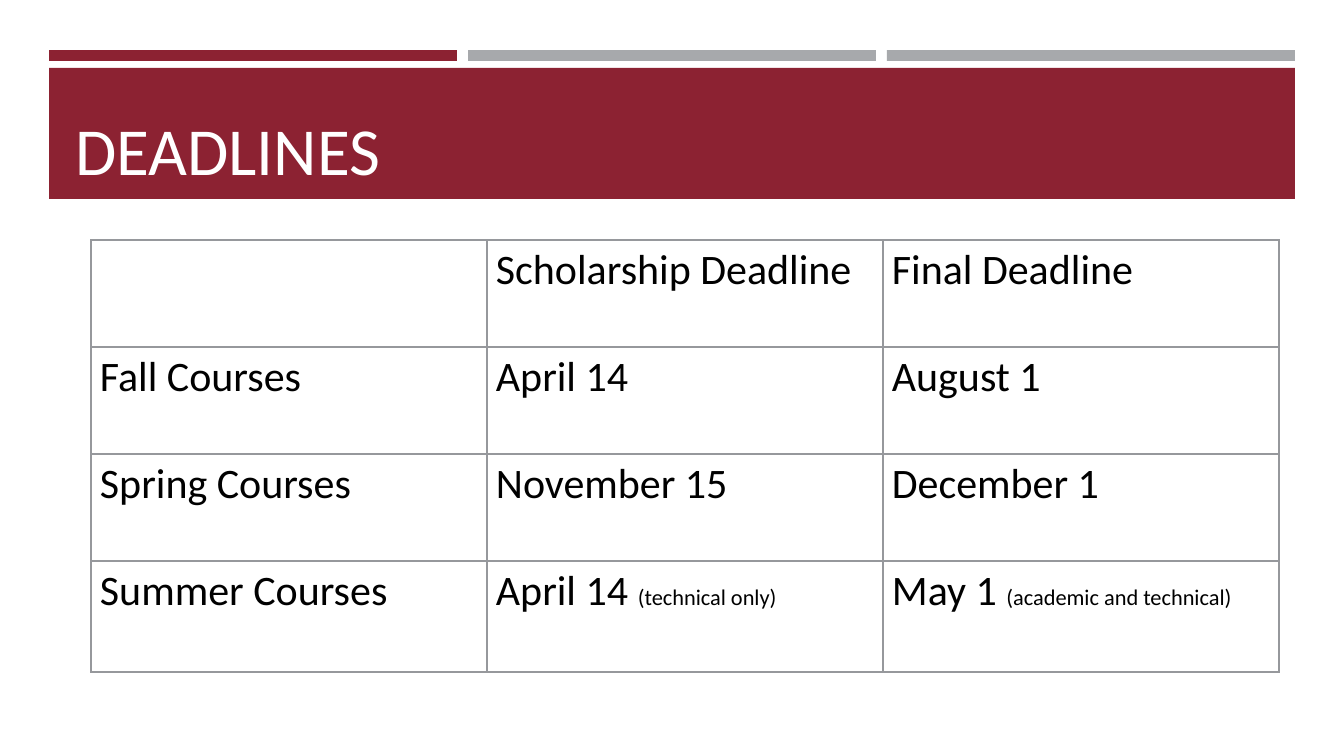
from lxml.etree import SubElement
from pptx import Presentation
from pptx.dml.color import RGBColor
from pptx.enum.shapes import MSO_SHAPE as Shape
from pptx.enum.text import MSO_ANCHOR as Anchor
from pptx.oxml.ns import qn
from pptx.util import Emu, Pt

CRIMSON, GRAY, BORDER = "8C2232", "A7A9AC", "96989C"
WHITE, BLACK = "FFFFFF", "000000"
FONT = "Calibri"

TITLE = "DEADLINES"
ACCENTS = [CRIMSON, GRAY, GRAY]
DEADLINES = [
    [[], [("Scholarship Deadline", 30)], [("Final Deadline", 30)]],
    [[("Fall Courses", 30)], [("April 14", 30)], [("August 1", 30)]],
    [[("Spring Courses", 30)], [("November 15", 30)], [("December 1", 30)]],
    [
        [("Summer Courses", 30)],
        [("April 14 ", 30), ("(technical only)", 16)],
        [("May 1 ", 30), ("(academic and technical)", 16)],
    ],
]

SLIDE_SIZE = (1344, 756)
ACCENT_LEFT, ACCENT_TOP, ACCENT_STEP = 49, 50, 419
ACCENT_SIZE = (408, 11)
BANNER = (49, 68, 1246, 131)
TITLE_BOX = (65, 78, 1216, 112)
TITLE_INSETS = {"margin_left": 10, "margin_right": 10, "margin_top": 5, "margin_bottom": 1}
TABLE_LEFT, TABLE_TOP, COLUMN_WIDTH = 91, 240, 396
ROW_HEIGHTS = [107, 107, 107, 111]
CELL_INSETS = {"margin_left": 9, "margin_right": 9, "margin_top": 5, "margin_bottom": 5}


def px(length):
    return Emu(round(length * 914400 / 100.8))


def rgb(color):
    return RGBColor.from_string(color)


def set_insets(target, insets):
    for name, length in insets.items():
        setattr(target, name, px(length))


def add_bar(page, bounds, color):
    bar = page.shapes.add_shape(Shape.RECTANGLE, *map(px, bounds))
    bar.shadow.inherit = False
    bar.fill.solid()
    bar.fill.fore_color.rgb = rgb(color)
    bar.line.fill.background()


def add_spans(para, spans, color):
    for text, size in spans:
        span = para.add_run()
        span.text = text
        for name, value in {"name": FONT, "size": Pt(size)}.items():
            setattr(span.font, name, value)
        span.font.color.rgb = rgb(color)


def set_borders(cell):
    properties = cell._tc.get_or_add_tcPr()
    for position, side in enumerate(("a:lnL", "a:lnR", "a:lnT", "a:lnB")):
        line = SubElement(properties, qn(side), w=str(Pt(1)))
        fill = SubElement(line, qn("a:solidFill"))
        SubElement(fill, qn("a:srgbClr"), val=BORDER)
        properties.insert(position, line)


def add_title(page):
    box = page.shapes.add_textbox(*map(px, TITLE_BOX))
    frame = box.text_frame
    frame.word_wrap = True
    frame.vertical_anchor = Anchor.BOTTOM
    set_insets(frame, TITLE_INSETS)
    add_spans(frame.paragraphs[0], [(TITLE, 48)], WHITE)


def add_deadlines(page):
    columns = len(DEADLINES[0])
    bounds = (TABLE_LEFT, TABLE_TOP, columns * COLUMN_WIDTH, sum(ROW_HEIGHTS))
    table = page.shapes.add_table(len(DEADLINES), columns, *map(px, bounds)).table
    for column in table.columns:
        column.width = px(COLUMN_WIDTH)
    for row, height, entries in zip(table.rows, ROW_HEIGHTS, DEADLINES):
        row.height = px(height)
        for cell, spans in zip(row.cells, entries):
            cell.fill.solid()
            cell.fill.fore_color.rgb = rgb(WHITE)
            set_insets(cell, CELL_INSETS)
            set_borders(cell)
            add_spans(cell.text_frame.paragraphs[0], spans, BLACK)


def main():
    deck = Presentation()
    deck.slide_width, deck.slide_height = map(px, SLIDE_SIZE)
    page = deck.slides.add_slide(deck.slide_layouts[6])
    for index, color in enumerate(ACCENTS):
        left = ACCENT_LEFT + index * ACCENT_STEP
        add_bar(page, (left, ACCENT_TOP, *ACCENT_SIZE), color)
    add_bar(page, BANNER, CRIMSON)
    add_title(page)
    add_deadlines(page)
    deck.save("out.pptx")


if __name__ == "__main__":
    main()
